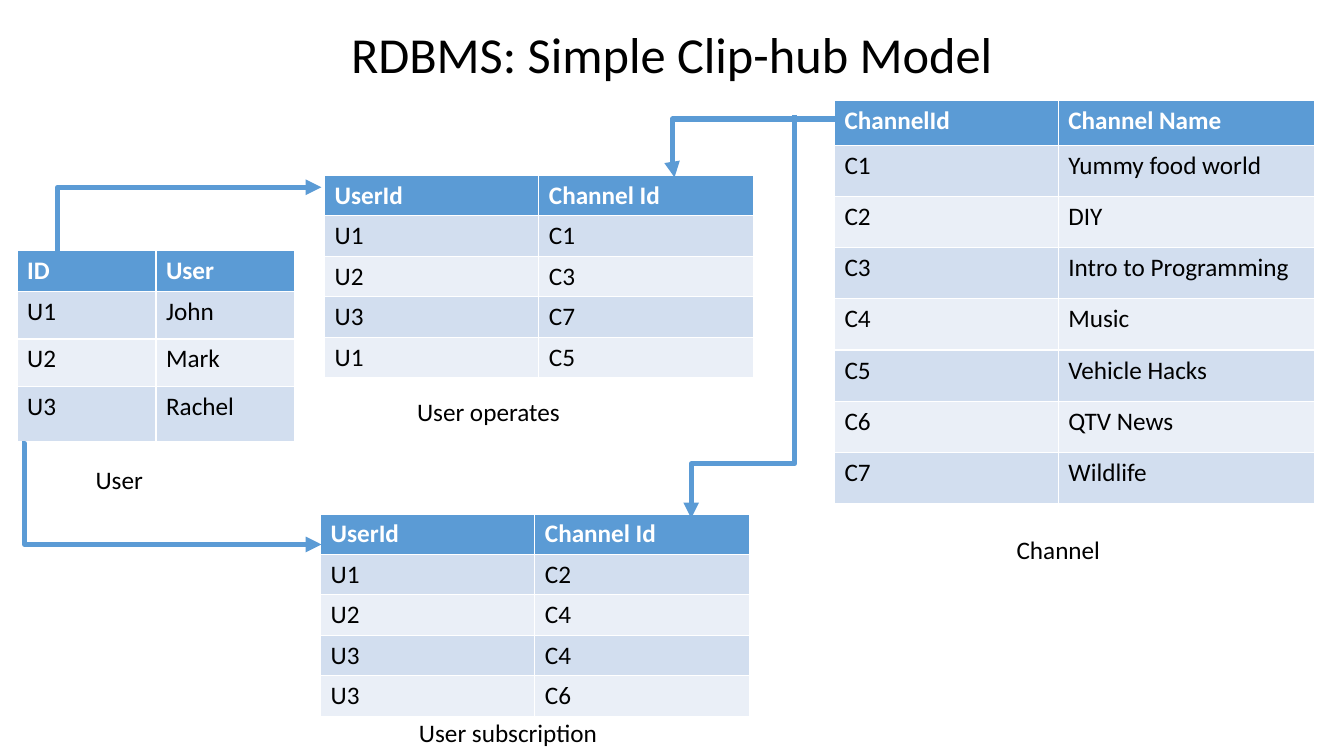
from lxml import etree
from pptx import Presentation
from pptx import util as u
from pptx.dml.color import RGBColor
from pptx.enum import shapes, text
from pptx.oxml import ns

BLUE, PALE, LIGHT = "5B9BD5", "D2DEEF", "EAEFF7"
BLACK, WHITE = "000000", "FFFFFF"

TITLE = "RDBMS: Simple Clip-hub Model"

TABLES = [
    {
        "at": (0.43, 6.32), "columns": (3.5, 3.5), "heights": (1.02, 1.2, 1.2, 1.38),
        "rows": [("ID", "User"), ("U1", "John"), ("U2", "Mark"), ("U3", "Rachel")],
    },
    {
        "at": (21.03, 2.54), "columns": (5.64, 6.45), "heights": (1.12,) + (1.29,) * 7,
        "rows": [
            ("ChannelId", "Channel Name"), ("C1", "Yummy food world"), ("C2", "DIY"),
            ("C3", "Intro to Programming"), ("C4", "Music"), ("C5", "Vehicle Hacks"),
            ("C6", "QTV News"), ("C7", "Wildlife"),
        ],
    },
    {
        "at": (8.18, 4.42), "columns": (5.4, 5.4), "heights": (1.02,) * 5,
        "rows": [("UserId", "Channel Id"), ("U1", "C1"), ("U2", "C3"), ("U3", "C7"), ("U1", "C5")],
    },
    {
        "at": (8.08, 12.95), "columns": (5.4, 5.4), "heights": (1.02,) * 5,
        "rows": [("UserId", "Channel Id"), ("U1", "C2"), ("U2", "C4"), ("U3", "C4"), ("U3", "C6")],
    },
]

ARROWS = [
    {"begin": (1.75, 6.76), "end": (8.1, 4.72), "bend": -4700, "vertical": False},
    {"begin": (0.56, 11.18), "end": (8.1, 13.72), "bend": 900, "vertical": False},
    {"begin": (20.02, 2.9), "end": (17.42, 13.06), "bend": 86500, "vertical": True},
    {"begin": (21.21, 3.0), "end": (17.0, 4.47), "bend": 101300, "vertical": False},
]

CAPTIONS = [
    ("User", 2.16, 11.58, 3.15),
    ("Channel", 25.37, 13.34, 3.78),
    ("User operates", 10.26, 9.86, 4.98),
    ("User subscription", 10.31, 17.96, 5.74),
]


def color(value):
    return RGBColor.from_string(value)


def write(frame, words, size=18, ink=BLACK, bold=False, align=text.PP_ALIGN.LEFT):
    para = frame.paragraphs[0]
    para.alignment = align
    span = para.add_run()
    span.text = words
    for name, value in {"name": "Calibri", "size": u.Pt(size), "bold": bold}.items():
        setattr(span.font, name, value)
    span.font.color.rgb = color(ink)


def add_label(page, words, left, top, width, height=1.02, **style):
    box = page.shapes.add_textbox(*map(u.Cm, (left, top, width, height)))
    box.text_frame.word_wrap = True
    write(box.text_frame, words, **style)


def add_grid(page, at, columns, heights, rows):
    size = (sum(columns), sum(heights))
    table = page.shapes.add_table(len(rows), len(columns), *map(u.Cm, at + size)).table
    for column, width in zip(table.columns, columns):
        column.width = u.Cm(width)
    for index, (row, height, words) in enumerate(zip(table.rows, heights, rows)):
        row.height = u.Cm(height)
        header = index == 0
        fill = BLUE if header else (PALE if index % 2 else LIGHT)
        for cell, word in zip(row.cells, words):
            cell.fill.solid()
            cell.fill.fore_color.rgb = color(fill)
            write(cell.text_frame, word, ink=WHITE if header else BLACK, bold=header)


def add_arrow(page, begin, end, bend, vertical):
    if vertical:
        (x1, y1), (x2, y2) = begin, end
        middle_x, middle_y = (x1 + x2) / 2, (y1 + y2) / 2
        half_x, half_y = (x2 - x1) / 2, (y2 - y1) / 2
        begin = (middle_x - half_y, middle_y + half_x)
        end = (middle_x + half_y, middle_y - half_x)
    arrow = page.shapes.add_connector(shapes.MSO_CONNECTOR.ELBOW, *map(u.Cm, begin + end))
    arrow.line.color.rgb = color(BLUE)
    arrow.line.width = u.Pt(3.75)
    properties = arrow.element.spPr
    if vertical:
        properties.find(ns.qn("a:xfrm")).set("rot", "5400000")
    guides = properties.find(ns.qn("a:prstGeom")).get_or_add_avLst()
    etree.SubElement(guides, ns.qn("a:gd"), name="adj1", fmla=f"val {bend}")
    etree.SubElement(properties.find(ns.qn("a:ln")), ns.qn("a:tailEnd"), type="triangle")
    etree.SubElement(properties, ns.qn("a:effectLst"))


def main():
    deck = Presentation()
    deck.slide_width, deck.slide_height = u.Cm(33.87), u.Cm(19.05)
    page = deck.slides.add_slide(deck.slide_layouts[6])
    add_label(page, TITLE, 0, 0.46, 33.87, 1.8, size=36, align=text.PP_ALIGN.CENTER)
    for grid in TABLES:
        add_grid(page, **grid)
    for arrow in ARROWS:
        add_arrow(page, **arrow)
    for caption in CAPTIONS:
        add_label(page, *caption)
    deck.save("out.pptx")


if __name__ == "__main__":
    main()
